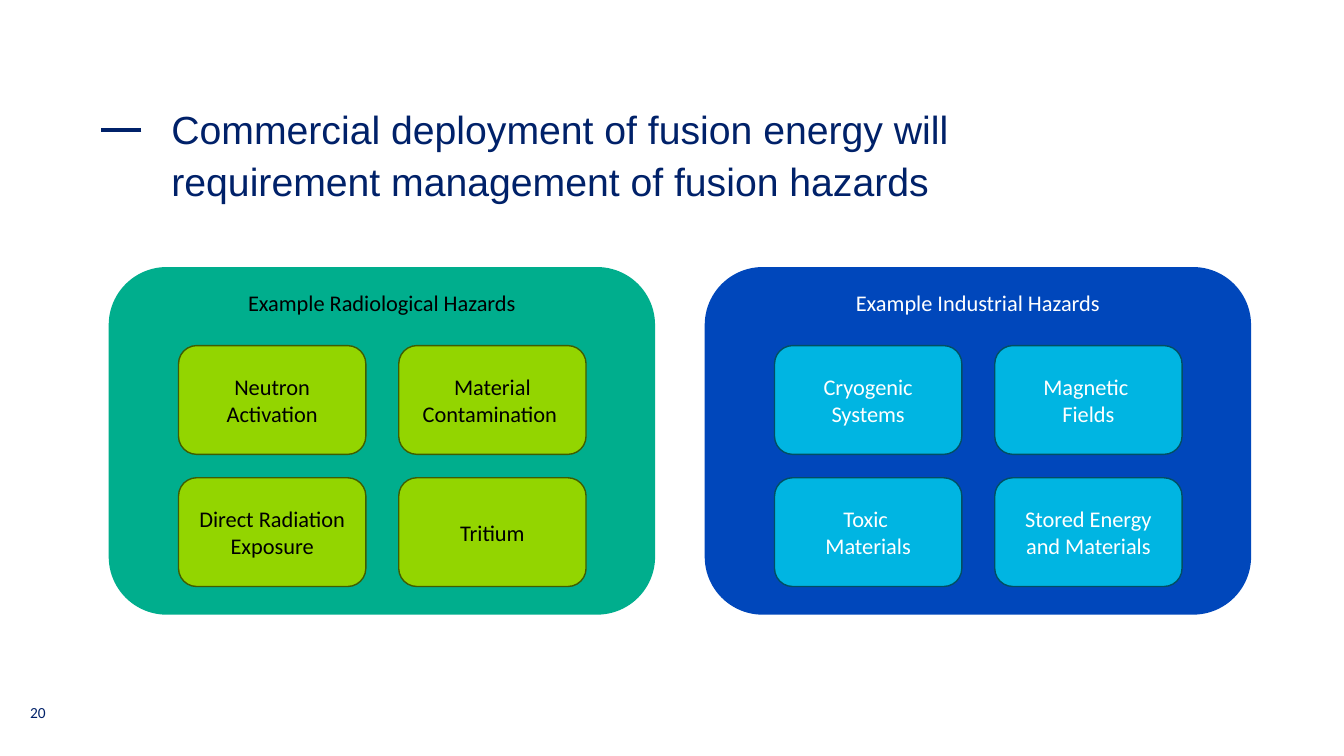
from lxml.etree import SubElement
from pptx import Presentation
from pptx.dml.color import RGBColor
from pptx.enum.shapes import MSO_CONNECTOR, MSO_SHAPE
from pptx.enum.text import MSO_ANCHOR, MSO_AUTO_SIZE, PP_ALIGN
from pptx.oxml.ns import qn
from pptx.util import Cm, Pt

# Content
TITLE = "Commercial deployment of fusion energy will requirement management of fusion hazards"
PAGE_NUMBER = "20"
NAVY = "002169"
PANELS = [
    {
        "heading": "Example Radiological Hazards",
        "hazards": ["Neutron Activation", "Material Contamination ",
                    "Direct Radiation Exposure", "Tritium"],
        "panel": "00AE8D", "tile": "93D500", "outline": "405D00", "text": "000000",
    },
    {
        "heading": "Example Industrial Hazards",
        "hazards": ["Cryogenic Systems", "Magnetic \nFields",
                    "Toxic \nMaterials", "Stored Energy and Materials"],
        "panel": "0047BB", "tile": "00B5E2", "outline": "004F63", "text": "FFFFFF",
    },
]

# Layout in centimetres
PANEL_LEFT, PANEL_TOP, PANEL_STEP = 2.74, 6.73, 15.02
PANEL_SIZE = (13.77, 8.76)
TILE_INSET_X, TILE_INSET_Y = 1.76, 1.98
TILE_STEP_X, TILE_STEP_Y = 5.55, 3.33
TILE_SIZE = (4.72, 2.74)


def color(value):
    return RGBColor.from_string(value)


def set_text(text_frame, text, size, text_color, font="Calibri", align=PP_ALIGN.LEFT):
    text_frame.word_wrap = True
    paragraph = text_frame.paragraphs[0]
    paragraph.text = text
    paragraph.alignment = align
    paragraph.font.name = font
    paragraph.font.size = Pt(size)
    paragraph.font.color.rgb = color(text_color)
    return paragraph


def add_rounded_box(group, left, top, size, fill, text, text_color, anchor, outline=None):
    width, height = size
    shape = group.shapes.add_shape(MSO_SHAPE.ROUNDED_RECTANGLE,
                                   Cm(left), Cm(top), Cm(width), Cm(height))
    shape.shadow.inherit = False
    shape.fill.solid()
    shape.fill.fore_color.rgb = color(fill)
    if outline:
        shape.line.color.rgb = color(outline)
        shape.line.width = Pt(1)
    else:
        shape.line.fill.background()
    shape.text_frame.vertical_anchor = anchor
    set_text(shape.text_frame, text, 16, text_color, align=PP_ALIGN.CENTER)


presentation = Presentation()
presentation.slide_width, presentation.slide_height = Cm(33.87), Cm(19.05)
slide = presentation.slides.add_slide(presentation.slide_layouts[5])

# Title with its dash
dash = slide.shapes.add_connector(MSO_CONNECTOR.STRAIGHT, Cm(3.56), Cm(3.28), Cm(2.54), Cm(3.28))
dash.line.color.rgb = color(NAVY)
dash.line.width = Pt(2.5)
SubElement(dash._element.spPr, qn("a:effectLst"))

title = slide.shapes.title
title.left, title.top, title.width, title.height = Cm(4.32), Cm(2.54), Cm(24.51), Cm(2.54)
frame = title.text_frame
frame.margin_left = frame.margin_right = frame.margin_top = frame.margin_bottom = 0
frame.vertical_anchor = MSO_ANCHOR.TOP
frame.auto_size = MSO_AUTO_SIZE.SHAPE_TO_FIT_TEXT
set_text(frame, TITLE, 28, NAVY, font="Arial").line_spacing = 1.1

# Page number
number_box = slide.shapes.add_textbox(Cm(0.76), Cm(17.6), Cm(1.22), Cm(1.02))
number_box.text_frame.margin_left = number_box.text_frame.margin_right = 0
set_text(number_box.text_frame, PAGE_NUMBER, 11, NAVY)

# Hazard panels, each with a two-by-two grid of tiles
for index, panel in enumerate(PANELS):
    left = PANEL_LEFT + index * PANEL_STEP
    group = slide.shapes.add_group_shape()
    add_rounded_box(group, left, PANEL_TOP, PANEL_SIZE, panel["panel"],
                    panel["heading"], panel["text"], MSO_ANCHOR.TOP)
    for position, hazard in enumerate(panel["hazards"]):
        row, column = divmod(position, 2)
        add_rounded_box(group,
                        left + TILE_INSET_X + column * TILE_STEP_X,
                        PANEL_TOP + TILE_INSET_Y + row * TILE_STEP_Y,
                        TILE_SIZE, panel["tile"], hazard, panel["text"],
                        MSO_ANCHOR.MIDDLE, panel["outline"])

presentation.save("out.pptx")
